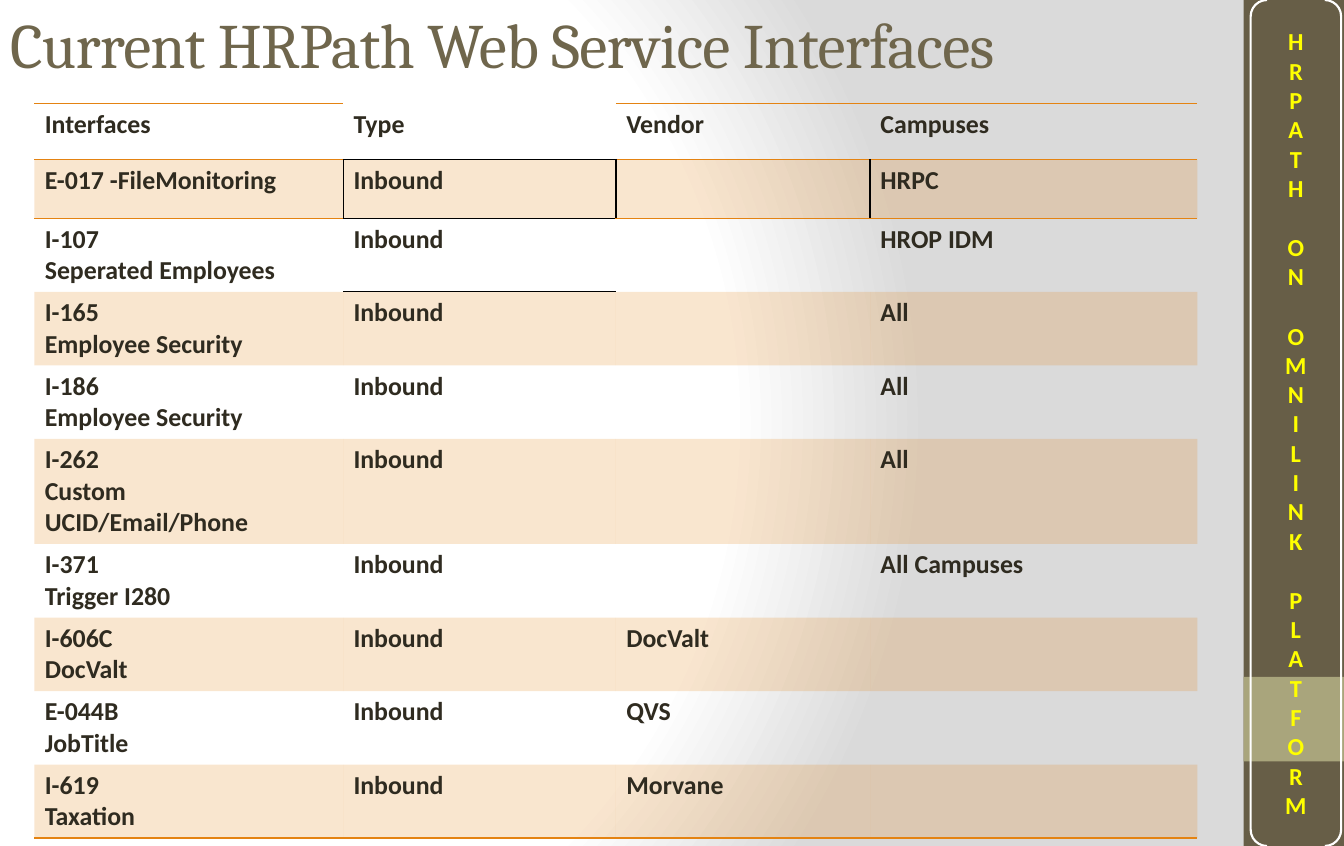
import pptx
import pptx.util
import pptx.dml.color
import pptx.enum.shapes
import pptx.enum.text
import pptx.oxml
import pptx.oxml.ns
from dataclasses import dataclass

Pt = pptx.util.Pt
NS = 'xmlns:a="http://schemas.openxmlformats.org/drawingml/2006/main"'
PLAIN = "{2D5ABB26-0587-4C30-8999-92F81FD0307C}"  # table style without grid


@dataclass(frozen=True)
class Theme:
    olive: str = "675E47"
    sage: str = "A9A57C"
    title: str = "6F664C"
    text: str = "2F2B20"
    glow: str = "FFFF00"
    white: str = "FFFFFF"
    grey: str = "DADADA"
    black: str = "000000"
    accent: str = "E48312"
    head: str = "Cambria"
    body: str = "Calibri"
    big: int = 44
    mid: int = 18
    small: int = 17


T = Theme()
HEAD = ["Interfaces", "Type", "Vendor", "Campuses"]
ROWS = [
    (["E-017 -FileMonitoring"], "", "HRPC"),
    (["I-107", "Seperated Employees"], "", "HROP IDM"),
    (["I-165", "Employee Security"], "", "All"),
    (["I-186", "Employee Security"], "", "All"),
    (["I-262", "Custom UCID/Email/Phone"], "", "All"),
    (["I-371", "Trigger I280"], "", "All Campuses"),
    (["I-606C", "DocValt"], "DocValt", ""),
    (["E-044B", "JobTitle"], "QVS", ""),
    (["I-619", "Taxation"], "Morvane", ""),
]
WIDTHS = [215, 190, 177, 228]
HEIGHTS = [39, 41] + [73.2 if "Custom" in row[0][-1] else 51.2
                      for row in ROWS[1:]]


def color(code):
    return pptx.dml.color.RGBColor.from_string(code)


def add_run(para, text, font, size, code, bold=False):
    run = para.add_run()
    run.text = text
    run.font.name = font
    run.font.size = Pt(size)
    run.font.bold = bold
    run.font.color.rgb = color(code)
    return run


def add_shape(slide, kind, box, fill=None):
    shape = slide.shapes.add_shape(kind, *map(Pt, box))
    shape.shadow.inherit = False
    if fill:
        shape.fill.solid()
        shape.fill.fore_color.rgb = color(fill)
    else:
        shape.fill.background()
    shape.line.fill.background()
    return shape


def set_back(slide):
    slide.background.fill.gradient()
    old = next(slide.element.iter(pptx.oxml.ns.qn("a:gradFill")))
    stops = "".join(
        f'<a:gs pos="{pos * 1000}"><a:srgbClr val="{code}"/></a:gs>'
        for pos, code in [(0, T.white), (75, T.white), (100, T.grey)])
    new = pptx.oxml.parse_xml(
        f'<a:gradFill {NS} rotWithShape="1"><a:gsLst>{stops}</a:gsLst>'
        '<a:path path="circle"><a:fillToRect l="20000" t="50000" '
        'r="100000" b="50000"/></a:path></a:gradFill>')
    old.getparent().replace(old, new)


def add_title(slide, box, text):
    frame = slide.shapes.add_textbox(*map(Pt, box)).text_frame
    frame.word_wrap = True
    frame.vertical_anchor = pptx.enum.text.MSO_ANCHOR.BOTTOM
    para = frame.paragraphs[0]
    para.line_spacing = 0.85
    run = add_run(para, text, T.head, T.big, T.title)
    run.font._element.set("spc", "-50")


def add_side(slide, box, text):
    left, top, wide, high = box
    kinds = pptx.enum.shapes.MSO_SHAPE
    add_shape(slide, kinds.RECTANGLE, box, T.olive)
    add_shape(slide, kinds.RECTANGLE,
              (left, top + 0.8 * high, wide, 0.1 * high), T.sage)
    # Bracket with one letter per line
    frame = add_shape(slide, kinds.DOUBLE_BRACKET,
                      (left + 5, top, wide - 7, high))
    frame.adjustments[0] = 0.18
    frame.line.color.rgb = color(T.white)
    frame.line.width = Pt(1.5)
    body = frame.text_frame
    body.word_wrap = True
    body.vertical_anchor = pptx.enum.text.MSO_ANCHOR.MIDDLE
    body.margin_left = body.margin_right = 0
    body.margin_top = body.margin_bottom = 0
    para = body.paragraphs[0]
    for num, word in enumerate(text.split()):
        for pos, char in enumerate(word):
            if num or pos:
                para = body.add_paragraph()
            para.alignment = pptx.enum.text.PP_ALIGN.CENTER
            if num and not pos:
                para.space_before = Pt(20.75)
            add_run(para, char, T.body, T.small, T.glow, True)


def set_edges(cell, edges):
    props = cell._tc.get_or_add_tcPr()
    used = [side for side in "LRTB" if side in edges]
    for pos, side in enumerate(used):
        props.insert(pos, pptx.oxml.parse_xml(
            f'<a:ln{side} {NS} w="12700"><a:solidFill>'
            f'<a:srgbClr val="{edges[side]}"/></a:solidFill></a:ln{side}>'))


def get_edges(row, col):
    if (row, col) == (1, 1):
        return dict.fromkeys("LRTB", T.black)
    if row == 0:
        return {"B": T.black} if col == 1 else {"T": T.accent, "B": T.accent}
    if row == 1:
        side = {0: {"R": T.black}, 2: {"L": T.black}}.get(col, {})
        return {"T": T.accent, **side}
    if (row, col) == (2, 1):
        return {"T": T.black}
    return {"B": T.accent} if row == len(ROWS) else {}


def fill_cell(cell, lines, band):
    if band:
        cell.fill.solid()
        cell.fill.fore_color.rgb = color(T.accent)
        tint = next(cell._tc.tcPr.iter(pptx.oxml.ns.qn("a:srgbClr")))
        tint.append(pptx.oxml.parse_xml(f'<a:alpha {NS} val="20000"/>'))
    else:
        cell.fill.background()
    frame = cell.text_frame
    for num, line in enumerate(lines):
        para = frame.add_paragraph() if num else frame.paragraphs[0]
        if line:
            add_run(para, line, T.body, T.mid, T.text, True)


def add_grid(slide, left, top):
    frame = slide.shapes.add_table(
        len(HEIGHTS), len(WIDTHS), Pt(left), Pt(top),
        Pt(sum(WIDTHS)), Pt(sum(HEIGHTS)))
    grid = frame.table
    grid.first_row = grid.horz_banding = False
    next(frame.element.iter(pptx.oxml.ns.qn("a:tableStyleId"))).text = PLAIN
    for col, wide in zip(grid.columns, WIDTHS):
        col.width = Pt(wide)
    for row, high in zip(grid.rows, HEIGHTS):
        row.height = Pt(high)
    data = [[[name] for name in HEAD]]
    data += [[names, ["Inbound"], [firm], [site]]
             for names, firm, site in ROWS]
    for row, cells in enumerate(data):
        for col, lines in enumerate(cells):
            cell = grid.cell(row, col)
            fill_cell(cell, lines, row % 2 == 1)
            set_edges(cell, get_edges(row, col))


def main():
    deck = pptx.Presentation()
    deck.slide_width, deck.slide_height = Pt(936), Pt(589)
    slide = deck.slides.add_slide(deck.slide_layouts[6])
    set_back(slide)
    add_side(slide, (866, 0, 70, 589), "HRPATH ON OMNILINK PLATFORM")
    add_title(slide, (0, 3.5, 792, 57),
              "Current HRPath Web Service Interfaces")
    add_grid(slide, 24, 72)
    deck.save("out.pptx")


if __name__ == "__main__":
    main()
